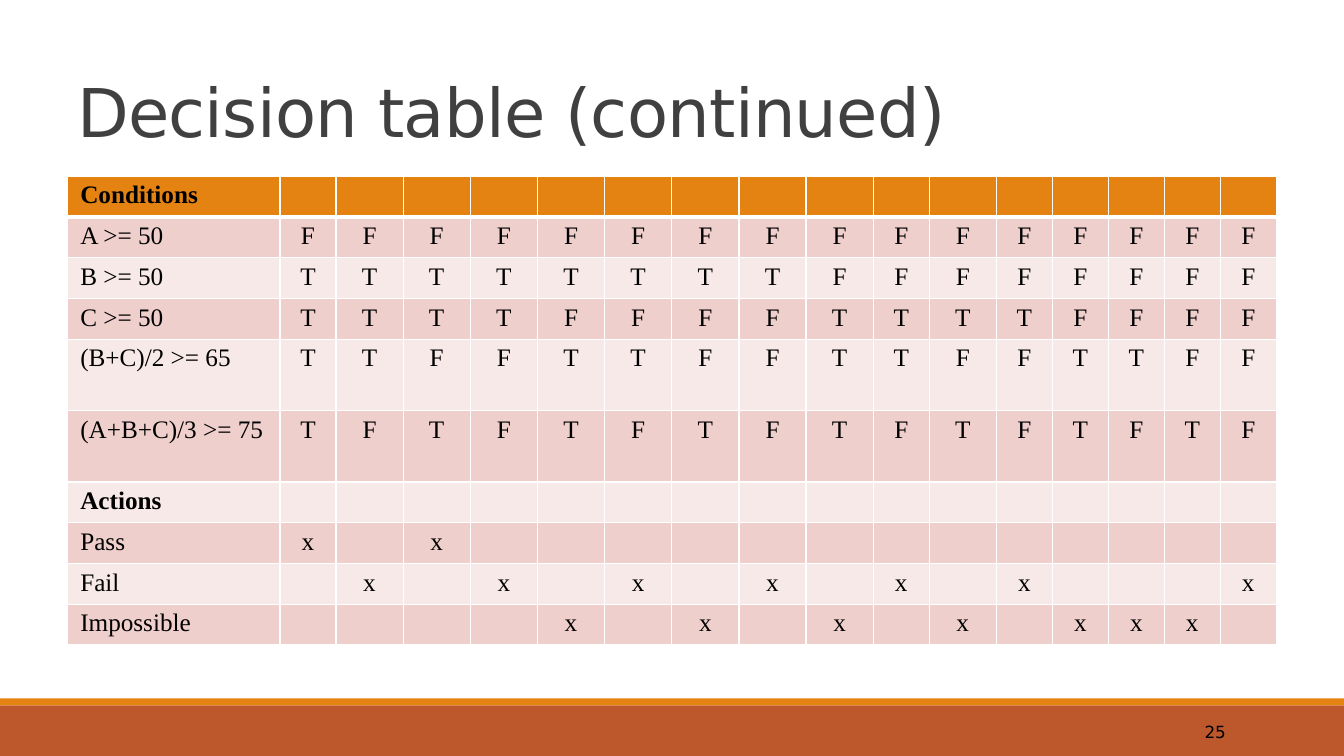
import lxml.etree
import pptx
import pptx.dml.color
import pptx.enum.shapes
import pptx.enum.text
import pptx.oxml.ns
import pptx.util

Inches, Pt = pptx.util.Inches, pptx.util.Pt
RGBColor = pptx.dml.color.RGBColor
Align, Anchor = pptx.enum.text.PP_ALIGN, pptx.enum.text.MSO_ANCHOR
qn = pptx.oxml.ns.qn

WHITE = RGBColor(0xFF, 0xFF, 0xFF)
BLACK = RGBColor(0x00, 0x00, 0x00)
GREY = RGBColor(0x40, 0x40, 0x40)
ORANGE = RGBColor(0xE4, 0x83, 0x12)
RUST = RGBColor(0xBD, 0x58, 0x2C)
DARK_BAND = RGBColor(0xEF, 0xCF, 0xCC)
LIGHT_BAND = RGBColor(0xF7, 0xE9, 0xE7)
SANS, SERIF = "DejaVu Sans", "Times New Roman"

# One character per rule; a space is an empty cell
DECISIONS = [
    ("Conditions", " " * 16),
    ("A >= 50", "F" * 16),
    ("B >= 50", "T" * 8 + "F" * 8),
    ("C >= 50", "TTTTFFFF" * 2),
    ("(B+C)/2 >= 65", "TTFF" * 4),
    ("(A+B+C)/3 >= 75", "TF" * 8),
    ("Actions", " " * 16),
    ("Pass", "x x             "),
    ("Fail", " x x x x x x   x"),
    ("Impossible", "    x x x x xxx "),
]
HEADINGS = ("Conditions", "Actions")
COLUMN_UNITS = [19, 5] + [6] * 8 + [5, 6] + [5] * 5
ROW_UNITS = [4] * 4 + [7] * 2 + [4] * 4


def set_font(para, name, size, color, bold=False):
    para.font.name, para.font.size, para.font.bold = name, Pt(size), bold
    para.font.color.rgb = color


def add_text(page, box, text, anchor):
    frame = page.shapes.add_textbox(*box).text_frame
    frame.word_wrap = True
    frame.vertical_anchor = anchor
    para = frame.paragraphs[0]
    para.text = text
    return para


def add_title(page, box, text):
    para = add_text(page, box, text, Anchor.BOTTOM)
    set_font(para, SANS, 48, GREY)
    para.line_spacing = 0.85
    para.runs[0].font.size = Pt(48)
    para.runs[0]._r.get_or_add_rPr().set("spc", "-50")


def add_footer(page, box, number):
    left, top, width, height = box
    stripe = int(height * 0.12)
    # Stripe above a wide band
    for band_top, band_height, color in (
        (top + stripe, height - stripe, RUST),
        (top, stripe, ORANGE),
    ):
        band = page.shapes.add_shape(
            pptx.enum.shapes.MSO_SHAPE.RECTANGLE, left, band_top, width, band_height)
        band.shadow.inherit = False
        band.fill.solid()
        band.fill.fore_color.rgb = color
        band.line.fill.background()
    # Slide number
    number_box = (left + int(width * 0.8125), top + int(height * 0.23),
                  int(width * 0.107), int(height * 0.7))
    para = add_text(page, number_box, number, Anchor.MIDDLE)
    para.alignment = Align.RIGHT
    set_font(para, SANS, 12, BLACK)


def set_borders(cell, top, bottom):
    properties = cell._tc.get_or_add_tcPr()
    for side, points in (("L", 1), ("R", 1), ("T", top), ("B", bottom)):
        line = lxml.etree.SubElement(properties, qn(f"a:ln{side}"), w=str(Pt(points)))
        fill = lxml.etree.SubElement(line, qn("a:solidFill"))
        lxml.etree.SubElement(fill, qn("a:srgbClr"), val=str(WHITE))


def add_decision_table(page, box):
    left, top, width, height = box
    table = page.shapes.add_table(len(ROW_UNITS), len(COLUMN_UNITS), *box).table
    table.first_row = table.horz_banding = False
    for column, units in zip(table.columns, COLUMN_UNITS):
        column.width = int(width * units / sum(COLUMN_UNITS))
    for row, units in zip(table.rows, ROW_UNITS):
        row.height = int(height * units / sum(ROW_UNITS))

    for r, (label, marks) in enumerate(DECISIONS):
        band = ORANGE if r == 0 else DARK_BAND if r % 2 else LIGHT_BAND
        for c, text in enumerate([label, *marks]):
            cell = table.cell(r, c)
            # A heavier rule separates the header row
            set_borders(cell, 3 if r == 1 else 1, 3 if r == 0 else 1)
            cell.fill.solid()
            cell.fill.fore_color.rgb = band
            cell.margin_left = cell.margin_right = Inches(0.13)
            cell.margin_top = cell.margin_bottom = Inches(0.05)
            para = cell.text_frame.paragraphs[0]
            para.text = text.strip()
            para.alignment = Align.CENTER if c else Align.LEFT
            set_font(para, SERIF, 18, BLACK, text in HEADINGS)


def main():
    deck = pptx.Presentation()
    deck.slide_width, deck.slide_height = Inches(13.33), Inches(7.5)
    page = deck.slides.add_slide(deck.slide_layouts[6])
    wide, high = deck.slide_width, deck.slide_height
    margin, content = int(wide * 0.05), int(wide * 0.9)

    add_footer(page, (0, int(high * 0.924), wide, high - int(high * 0.924)), "25")
    add_title(page, (margin, int(high * 0.04), content, int(high / 6)),
              "Decision table (continued)")
    add_decision_table(page, (margin, int(high * 0.2333), content, int(high * 0.62)))
    deck.save("out.pptx")


if __name__ == "__main__":
    main()
